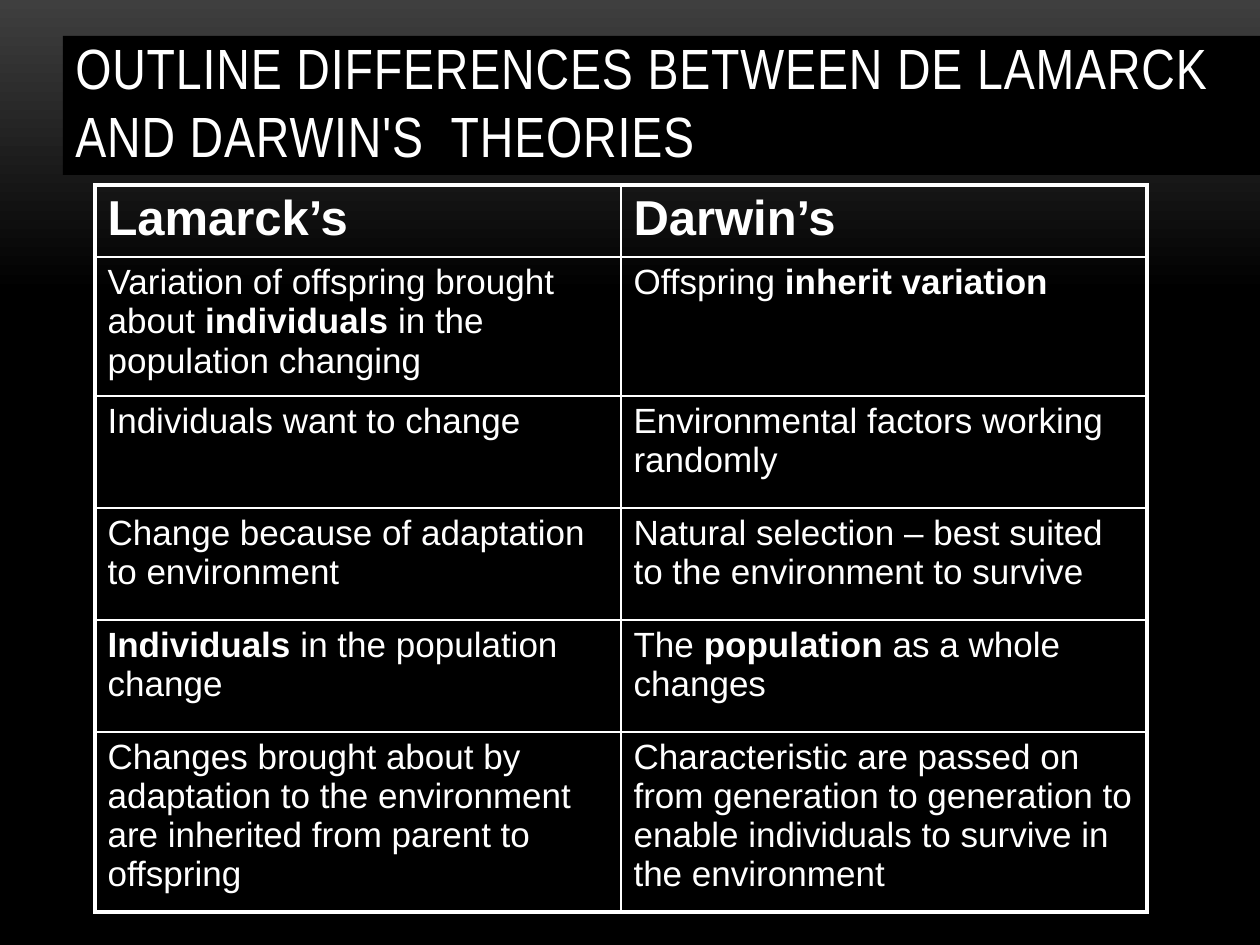
from copy import deepcopy

from pptx import Presentation
from pptx.dml.color import RGBColor
from pptx.enum.shapes import MSO_SHAPE as Shape
from pptx.enum.text import MSO_ANCHOR as Anchor, PP_ALIGN as Align
from pptx.oxml import parse_xml
from pptx.oxml.ns import nsdecls, qn
from pptx.util import Emu, Pt

TITLE = "OUTLINE DIFFERENCES BETWEEN DE LAMARCK AND DARWIN'S  THEORIES"
HEADINGS = ("Lamarck’s", "Darwin’s")
# "*" switches bold on and off
COMPARISONS = [
    ("Variation of offspring brought about *individuals* in the population changing",
     "Offspring *inherit variation*"),
    ("Individuals want to change",
     "Environmental factors working randomly"),
    ("Change because of adaptation to environment",
     "Natural selection – best suited to the environment to survive"),
    ("*Individuals* in the population change",
     "The *population *as a whole changes"),
    ("Changes brought about by adaptation to the environment are inherited from parent to offspring",
     "Characteristic are passed on from generation to generation to enable individuals "
     "to survive in the environment"),
]
ROW_HEIGHTS = (72, 139, 112, 112, 112, 180)
COLUMN_WIDTH = 526
WHITE, BLACK, GREY = "FFFFFF", "000000", "3F3F3F"
THIN, THICK = 1, 2.25


def px(length):
    return Emu(round(length * 914400 / 126))


def color(code):
    return RGBColor.from_string(code)


def write(frame, text, size, font="Arial", bold=False, spacing=0):
    para = frame.paragraphs[0]
    para.alignment = Align.LEFT
    for index, part in enumerate(text.split("*")):
        if not part:
            continue
        span = para.add_run()
        span.text = part
        span.font.name, span.font.size = font, Pt(size)
        span.font.bold = bold or index % 2 == 1
        span.font.color.rgb = color(WHITE)
        if spacing:
            span.font._element.set("spc", str(round(spacing * 100)))


def paint_background(page):
    fill = page.background.fill
    fill.gradient()
    fill.gradient_angle = 270
    for stop, place, code in zip(fill.gradient_stops, (0, 0.31), (GREY, BLACK)):
        stop.position, stop.color.rgb = place, color(code)
    stops = page.element.find(".//" + qn("a:gsLst"))
    last = deepcopy(stops[-1])
    last.set("pos", "100000")
    stops.append(last)


def add_title(page):
    box = page.shapes.add_shape(Shape.RECTANGLE, px(63), px(36), px(1197), px(139))
    box.shadow.inherit = False
    box.fill.solid()
    box.fill.fore_color.rgb = color(BLACK)
    box.line.fill.background()
    box.text_frame.word_wrap = True
    box.text_frame.vertical_anchor = Anchor.BOTTOM
    write(box.text_frame, TITLE, 32.4, font="Arial Narrow", spacing=0.5)


def add_borders(cell, outer):
    properties = cell._tc.get_or_add_tcPr()
    for side in "LRTB":
        width = Pt(THICK if side in outer else THIN)
        properties.append(parse_xml(
            f'<a:ln{side} {nsdecls("a")} w="{width}"><a:solidFill>'
            f'<a:srgbClr val="{WHITE}"/></a:solidFill></a:ln{side}>'))


def add_comparison(page):
    rows = [HEADINGS, *COMPARISONS]
    table = page.shapes.add_table(len(rows), 2, px(95), px(185),
                                  px(2 * COLUMN_WIDTH), px(sum(ROW_HEIGHTS))).table
    table.first_row = table.horz_banding = False
    for column in table.columns:
        column.width = px(COLUMN_WIDTH)
    for r, (texts, height) in enumerate(zip(rows, ROW_HEIGHTS)):
        table.rows[r].height = px(height)
        for c, text in enumerate(texts):
            cell = table.cell(r, c)
            outer = "LR"[c] + ("T" if r == 0 else "B" if r == len(rows) - 1 else "")
            add_borders(cell, outer)
            cell.fill.background()
            write(cell.text_frame, text, 28 if r == 0 else 20, bold=r == 0)


def main():
    """Build the slide comparing the theories of Lamarck and Darwin."""
    deck = Presentation()
    deck.slide_width, deck.slide_height = px(1260), px(945)
    page = deck.slides.add_slide(deck.slide_layouts[6])
    paint_background(page)
    add_title(page)
    add_comparison(page)
    deck.save("out.pptx")


if __name__ == "__main__":
    main()
